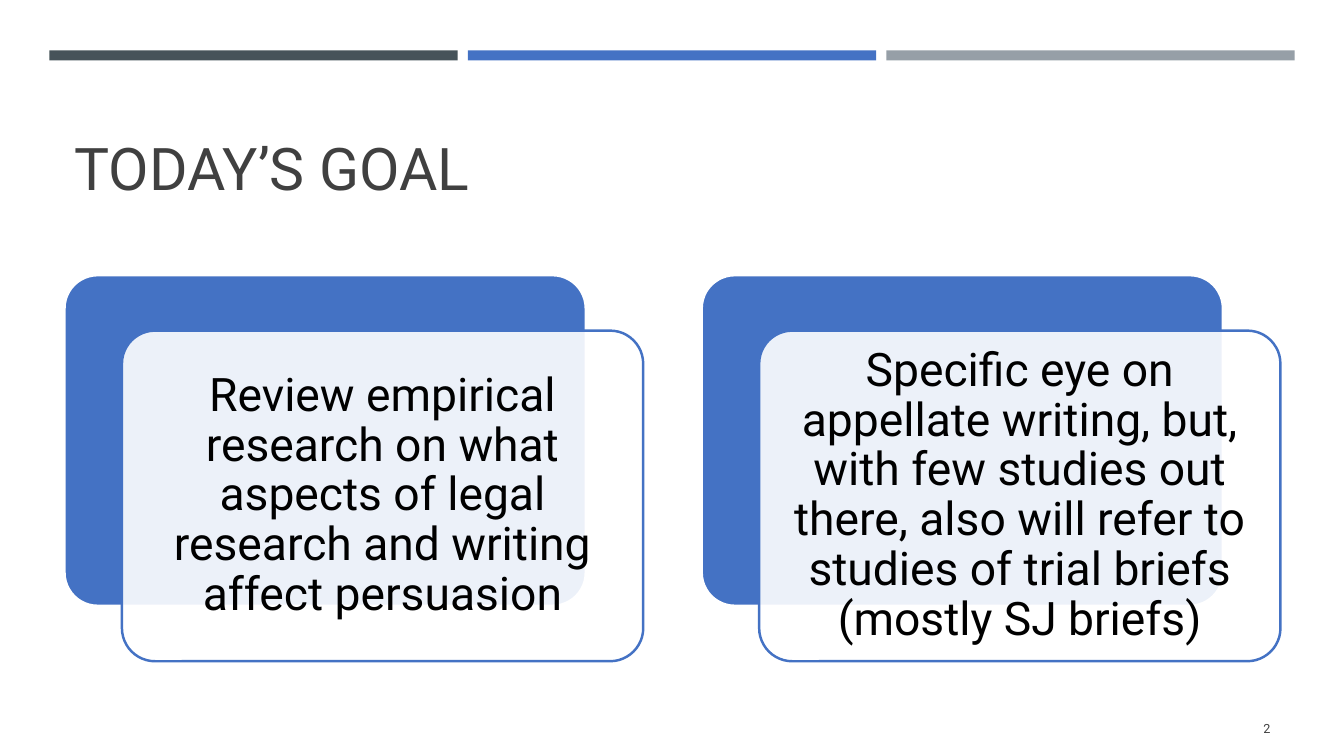
from lxml.etree import SubElement
from pptx import Presentation
from pptx.dml.color import RGBColor
from pptx.enum.shapes import MSO_SHAPE
from pptx.enum.text import MSO_ANCHOR, MSO_AUTO_SIZE, PP_ALIGN
from pptx.oxml.ns import qn
from pptx.util import Inches, Pt

FONT = "Roboto"
WHITE = RGBColor(0xFF, 0xFF, 0xFF)
BLACK = RGBColor(0x00, 0x00, 0x00)
CHARCOAL = RGBColor(0x40, 0x40, 0x40)
SLATE = RGBColor(0x46, 0x53, 0x59)
BLUE = RGBColor(0x44, 0x72, 0xC4)
GRAY = RGBColor(0x96, 0x9F, 0xA7)

GOALS = [
    "Review empirical research on what aspects of legal research and writing affect persuasion",
    "Specific eye on appellate writing, but, with few studies out there, also will refer to "
    "studies of trial briefs (mostly SJ briefs)",
]


def write_text(frame, text, size, color=CHARCOAL, align=PP_ALIGN.LEFT,
               anchor=MSO_ANCHOR.MIDDLE, line_spacing=None, space_after=0):
    frame.word_wrap = True
    frame.auto_size = MSO_AUTO_SIZE.NONE
    frame.vertical_anchor = anchor
    paragraph = frame.paragraphs[0]
    paragraph.alignment = align
    paragraph.line_spacing = line_spacing
    paragraph.space_after = Pt(space_after)
    run = paragraph.add_run()
    run.text = text
    run.font.name = FONT
    run.font.size = Pt(size)
    run.font.color.rgb = color


class GoalSlide:
    def __init__(self, presentation):
        self.slide = presentation.slides.add_slide(presentation.slide_layouts[5])
        self.shapes = self.slide.shapes

    def add_title(self, text, left, top, width, height):
        title = self.shapes.title
        title.left, title.top = Inches(left), Inches(top)
        title.width, title.height = Inches(width), Inches(height)
        write_text(title.text_frame, text, 42, anchor=MSO_ANCHOR.BOTTOM, line_spacing=0.9)

    def add_block(self, kind, left, top, width, height, fill, line=None):
        shape = self.shapes.add_shape(
            kind, Inches(left), Inches(top), Inches(width), Inches(height))
        shape.shadow.inherit = False
        shape.fill.solid()
        shape.fill.fore_color.rgb = fill
        if line is None:
            shape.line.fill.background()
        else:
            shape.line.color.rgb = line
            shape.line.width = Pt(1.75)
        return shape

    def add_card(self, text, left, top, width=5.17, height=3.28):
        back = self.add_block(MSO_SHAPE.ROUNDED_RECTANGLE, left, top, width, height, BLUE, WHITE)
        front = self.add_block(MSO_SHAPE.ROUNDED_RECTANGLE, left + 0.57, top + 0.55,
                               width, height, WHITE, BLUE)
        for shape in (back, front):
            shape.adjustments[0] = 0.1
        # The front card is slightly see-through
        color = front.fill._xPr.find(qn("a:solidFill"))[0]
        SubElement(color, qn("a:alpha"), val="90000")
        frame = front.text_frame
        frame.margin_left = frame.margin_right = Inches(0.14)
        frame.margin_top = frame.margin_bottom = Inches(0.14)
        write_text(frame, text, 33, color=BLACK, align=PP_ALIGN.CENTER, line_spacing=0.9)

    def add_page_number(self, text, left, top, width, height):
        box = self.shapes.add_textbox(Inches(left), Inches(top), Inches(width), Inches(height))
        write_text(box.text_frame, text, 9, align=PP_ALIGN.RIGHT, space_after=6)


def main():
    presentation = Presentation()
    presentation.slide_width = Inches(13.33)
    presentation.slide_height = Inches(7.5)
    slide = GoalSlide(presentation)

    # Colour bars across the top
    for index, color in enumerate((SLATE, BLUE, GRAY)):
        slide.add_block(MSO_SHAPE.RECTANGLE, 0.49 + 4.15 * index, 0.5, 4.05, 0.1, color)

    slide.add_title("TODAY’S GOAL", 0.64, 0.77, 12.06, 1.3)

    # Two layered goal cards
    for index, goal in enumerate(GOALS):
        slide.add_card(goal, 0.64 + 6.32 * index, 2.73)

    slide.add_page_number("2", 11.55, 7.03, 1.15, 0.4)
    presentation.save("out.pptx")


if __name__ == "__main__":
    main()
